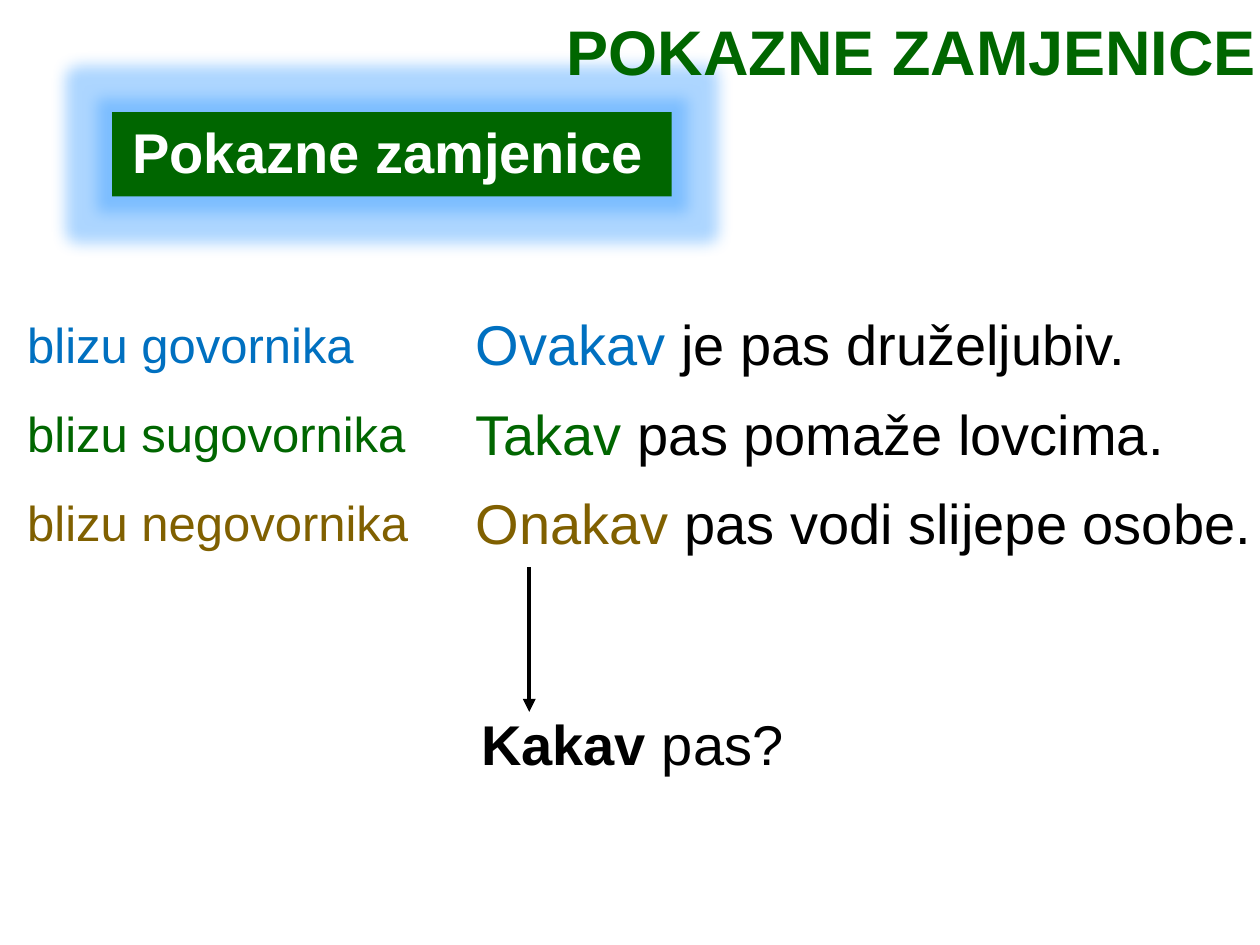
from lxml.etree import SubElement
from pptx import Presentation
from pptx.dml.color import RGBColor
from pptx.enum.shapes import MSO_CONNECTOR, MSO_SHAPE
from pptx.enum.text import MSO_ANCHOR as Anchor, PP_ALIGN as Align
from pptx.oxml.ns import qn
from pptx.util import Cm, Pt

COLORS = {"green": "006600", "blue": "0070C0", "brown": "806000",
          "black": "000000", "white": "FFFFFF", "glow": "3399FF"}
FONT = "Arial"

TITLE = "POKAZNE ZAMJENICE"
HEADING = "Pokazne zamjenice"
# label, pronoun, rest of the sentence, colour
ROWS = [
    ("blizu govornika", "Ovakav ", "je pas druželjubiv.", "blue"),
    ("blizu sugovornika", "Takav ", "pas pomaže lovcima.", "green"),
    ("blizu negovornika", "Onakav ", "pas vodi slijepe osobe.", "brown"),
]
QUESTION = [("Kakav ", "black", True), ("pas?", "black", False)]

ROW_TOP, ROW_PITCH = 6.12, 1.8
LABEL_LEFT, SENTENCE_LEFT = 0.3, 9.34
ARROW_X, ARROW_TOP, ARROW_BOTTOM = 10.67, 11.43, 14.35


def rgb(name):
    return RGBColor.from_string(COLORS[name])


def add_text(slide, box, runs, size, anchor=Anchor.TOP, wrap=True):
    """Add a one-paragraph text box; runs are (text, colour, bold)."""
    tf = slide.shapes.add_textbox(*map(Cm, box)).text_frame
    tf.word_wrap = wrap
    tf.vertical_anchor = anchor
    p = tf.paragraphs[0]
    for text, color, bold in runs:
        r = p.add_run()
        r.text = text
        r.font.name = FONT
        r.font.size = Pt(size)
        r.font.bold = bold
        r.font.color.rgb = rgb(color)
    return tf


def add_banner(slide):
    s = slide.shapes.add_shape(MSO_SHAPE.RECTANGLE, Cm(2.26), Cm(2.26), Cm(11.28), Cm(1.7))
    s.fill.solid()
    s.fill.fore_color.rgb = rgb("green")
    s.line.fill.background()
    s.shadow.inherit = False
    effects = s._element.spPr.find(qn("a:effectLst"))
    glow = SubElement(effects, qn("a:glow"), rad=str(Pt(18)))
    color = SubElement(glow, qn("a:srgbClr"), val=COLORS["glow"])
    SubElement(color, qn("a:alpha"), val="40000")

    tf = add_text(slide, (2.49, 1.7, 10.69, 2.13), [(HEADING, "white", True)], 32, Anchor.BOTTOM)
    tf.margin_left = tf.margin_right = Cm(0.18)
    tf.margin_top = tf.margin_bottom = Cm(0.1)
    tf.paragraphs[0].space_before = Pt(10)


def add_arrow(slide):
    s = slide.shapes.add_connector(MSO_CONNECTOR.STRAIGHT, Cm(ARROW_X), Cm(ARROW_TOP),
                                   Cm(ARROW_X), Cm(ARROW_BOTTOM))
    s.line.color.rgb = rgb("black")
    s.line.width = Pt(2.5)
    SubElement(s.line._get_or_add_ln(), qn("a:tailEnd"), type="triangle")
    SubElement(s._element.spPr, qn("a:effectLst"))


def main():
    prs = Presentation()
    prs.slide_width, prs.slide_height = Cm(25.4), Cm(19.05)
    slide = prs.slides.add_slide(prs.slide_layouts[6])

    add_banner(slide)
    tf = add_text(slide, (4.17, 0, 21.41, 1.93), [(TITLE, "green", True)], 36, Anchor.BOTTOM)
    tf.paragraphs[0].alignment = Align.RIGHT
    tf.paragraphs[0].line_spacing = 0.9

    for i, (label, pronoun, rest, color) in enumerate(ROWS):
        top = ROW_TOP + i * ROW_PITCH
        add_text(slide, (LABEL_LEFT, top + 0.09, 8.3, 1.45),
                 [(label, color, False)], 28, wrap=False)
        add_text(slide, (SENTENCE_LEFT, top, 22.94, 1.63),
                 [(pronoun, color, False), (rest, "black", False)], 32)

    add_arrow(slide)
    add_text(slide, (9.45, 14.17, 14.02, 1.63), QUESTION, 32)
    prs.save("out.pptx")


if __name__ == "__main__":
    main()
